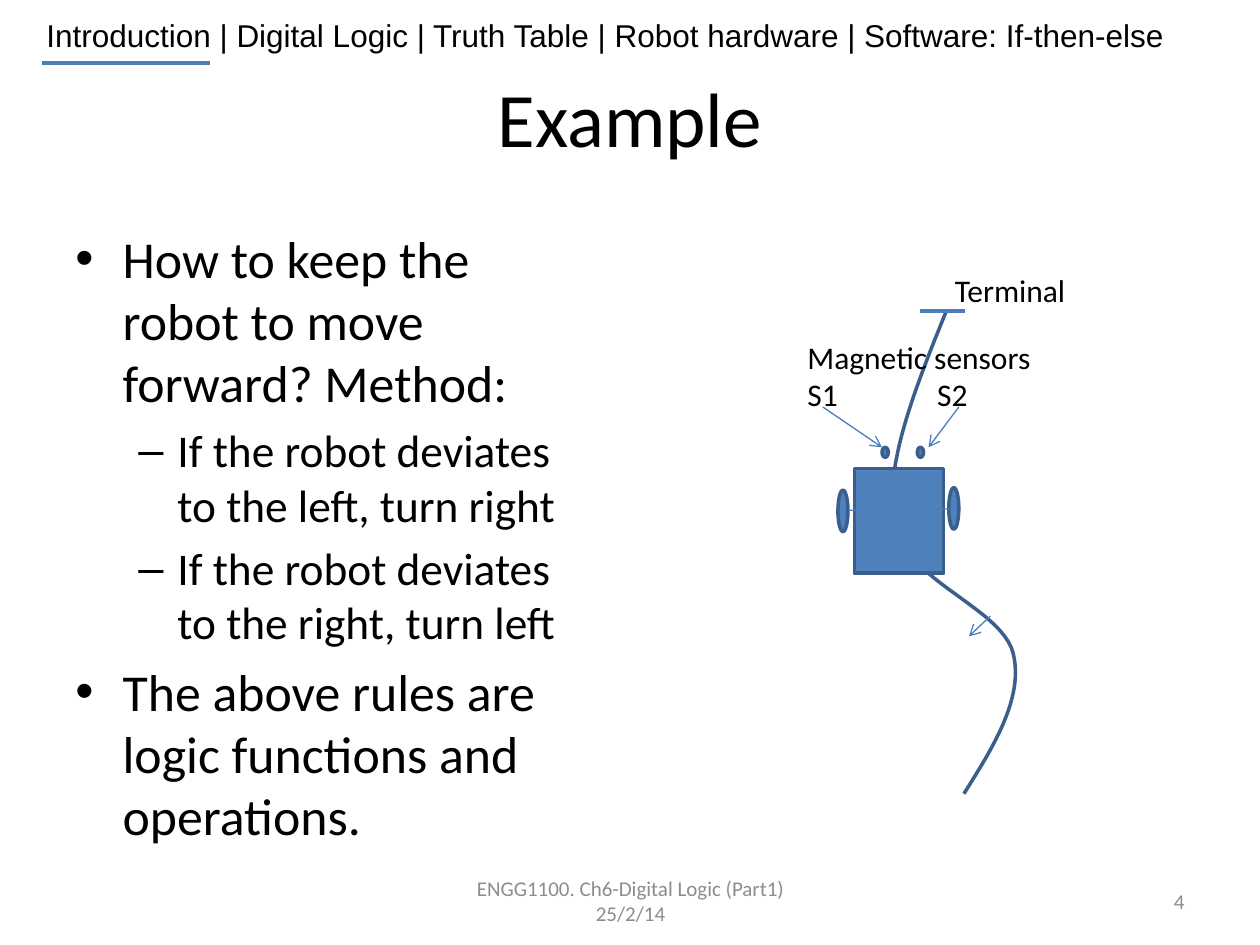
"""Builds a slide on keeping a line-following robot on its track."""
from lxml.etree import SubElement as Sub
from pptx import Presentation
from pptx.dml.color import RGBColor as Rgb
from pptx.enum.shapes import MSO_CONNECTOR as Conn, MSO_SHAPE as Kind
from pptx.enum.text import MSO_ANCHOR as Anchor, PP_ALIGN as Align
from pptx.oxml.ns import qn
from pptx.util import Inches, Pt

COLS, ROWS = 100, 75
CELL = Inches(10) // COLS
HUES = {"ink": "000000", "grey": "8C8C8C", "blue": "4F81BD", "edge": "3A5F8C", "line": "4B7EBC"}


def grid(*nums):
    return [round(n * CELL) for n in nums]


def hue(name):
    return Rgb.from_string(HUES[name])


def apply(obj, vals):
    for key, val in vals.items():
        setattr(obj, key, val)


def style(para, text, size, ink="ink", face="Calibri", **vals):
    run = para.add_run()
    run.text = text
    apply(run.font, {"size": Pt(size), "name": face})
    run.font.color.rgb = hue(ink)
    apply(para, vals)


def label(slide, box, text, size, wrap=True, anchor=Anchor.TOP, **vals):
    frame = slide.shapes.add_textbox(*grid(*box)).text_frame
    apply(frame, {"word_wrap": wrap, "vertical_anchor": anchor})
    for row, part in enumerate(text.split("\n")):
        para = frame.paragraphs[0] if row == 0 else frame.add_paragraph()
        style(para, part, size, **vals)
    return frame


def title(slide, text):
    head = slide.shapes.title
    apply(head, dict(zip(("left", "top", "width", "height"), grid(5, 3, 90, 12.5))))
    head.text_frame.vertical_anchor = Anchor.MIDDLE
    style(head.text_frame.paragraphs[0], text, 44, alignment=Align.CENTER)


def points(slide, box, items):
    frame = slide.shapes.add_textbox(*grid(*box)).text_frame
    frame.word_wrap = True
    looks = [(29.6, 3.75, 3.75, "•"), (25.9, 8.1, 3.1, "–")]
    for row, (level, text) in enumerate(items):
        size, left, hang, mark = looks[level]
        para = frame.paragraphs[0] if row == 0 else frame.add_paragraph()
        style(para, text, size, level=level, space_before=Pt(size * 0.2))
        props = para._p.get_or_add_pPr()
        near, back = grid(left, -hang)
        props.set("marL", str(near))
        props.set("indent", str(back))
        Sub(props, qn("a:buFont"), typeface="Arial")
        Sub(props, qn("a:buChar"), char=mark)


def tab(para, stop):
    tabs = Sub(para._p.get_or_add_pPr(), qn("a:tabLst"))
    Sub(tabs, qn("a:tab"), pos=str(grid(stop)[0]), algn="l")


def part(slide, kind, box):
    item = slide.shapes.add_shape(kind, *grid(*box))
    item.shadow.inherit = False
    item.fill.solid()
    item.fill.fore_color.rgb = hue("blue")
    item.line.color.rgb = hue("edge")
    item.line.width = Pt(2)


def line(slide, ends, width=0.75, arrow=False):
    item = slide.shapes.add_connector(Conn.STRAIGHT, *grid(*ends))
    item.line.color.rgb = hue("line")
    item.line.width = Pt(width)
    if arrow:
        Sub(item.line._get_or_add_ln(), qn("a:tailEnd"), type="arrow")
    Sub(item._element.spPr, qn("a:effectLst"))


def bend(knots, steps=24):
    """Return points along one cubic curve, after its start."""
    out = []
    for step in range(1, steps + 1):
        t = step / steps
        share = ((1 - t) ** 3, 3 * t * (1 - t) ** 2, 3 * t * t * (1 - t), t ** 3)
        out.append(grid(*(sum(s * n for s, n in zip(share, axis)) for axis in zip(*knots))))
    return out


def track(slide, knots):
    pen = slide.shapes.build_freeform(*grid(*knots[0]))
    for first in range(0, len(knots) - 1, 3):
        pen.add_line_segments(bend(knots[first:first + 4]), close=False)
    item = pen.convert_to_shape()
    item.shadow.inherit = False
    item.fill.background()
    item.line.color.rgb = hue("edge")
    item.line.width = Pt(2)


def robot(slide):
    track(slide, [(75.1, 24.7), (72.6, 30.9), (70.1, 37.1), (71, 41.6),
                  (71.9, 46.1), (79.4, 48.2), (80.4, 51.8),
                  (81.3, 55.3), (78.9, 59.2), (76.5, 63)])
    part(slide, Kind.RECTANGLE, (67.8, 37.2, 7.1, 8.3))
    for left, top in ((66.5, 38.9), (75.3, 38.7)):
        part(slide, Kind.OVAL, (left, top, 0.8, 3.3))
    line(slide, (67.4, 40.5, 75.3, 40.4))
    for left in (70, 72.8):
        part(slide, Kind.OVAL, (left, 35.5, 0.5, 0.8))


def notes(slide):
    frame = label(slide, (63.1, 26.3, 19.8, 10), "Magnetic sensors\nS1\tS2", 18, wrap=False)
    tab(frame.paragraphs[1], 10.3)
    for ends in ((78.6, 48.9, 76.9, 50.5), (65.3, 32.3, 70, 35.5), (76.1, 32.3, 73.7, 35.5)):
        line(slide, ends, arrow=True)
    line(slide, (73, 24.7, 76.6, 24.7), 2)
    label(slide, (74.8, 21, 10.9, 4), "Terminal", 18, wrap=False)


def main():
    deck = Presentation()
    deck.slide_width, deck.slide_height = grid(COLS, ROWS)
    slide = deck.slides.add_slide(deck.slide_layouts[5])
    label(slide, (2.7, 0.8, 95, 4),
          "Introduction | Digital Logic | Truth Table | Robot hardware | Software: If-then-else",
          18, face="Arial")
    title(slide, "Example")
    points(slide, (5, 17.5, 41.7, 49.5), [
        (0, "How to keep the robot to move forward? Method:"),
        (1, "If the robot deviates to the left, turn right"),
        (1, "If the robot deviates to the right, turn left"),
        (0, "The above rules are logic functions and operations."),
    ])
    foot = {"size": 12, "ink": "grey", "anchor": Anchor.MIDDLE}
    label(slide, (34.2, 69.5, 31.7, 4), "ENGG1100. Ch6-Digital Logic (Part1) 25/2/14",
          alignment=Align.CENTER, **foot)
    label(slide, (71.7, 69.5, 23.3, 4), "4", alignment=Align.RIGHT, **foot)
    robot(slide)
    notes(slide)
    line(slide, (3.3, 5, 16.7, 5), 2)
    deck.save("out.pptx")


if __name__ == "__main__":
    main()
